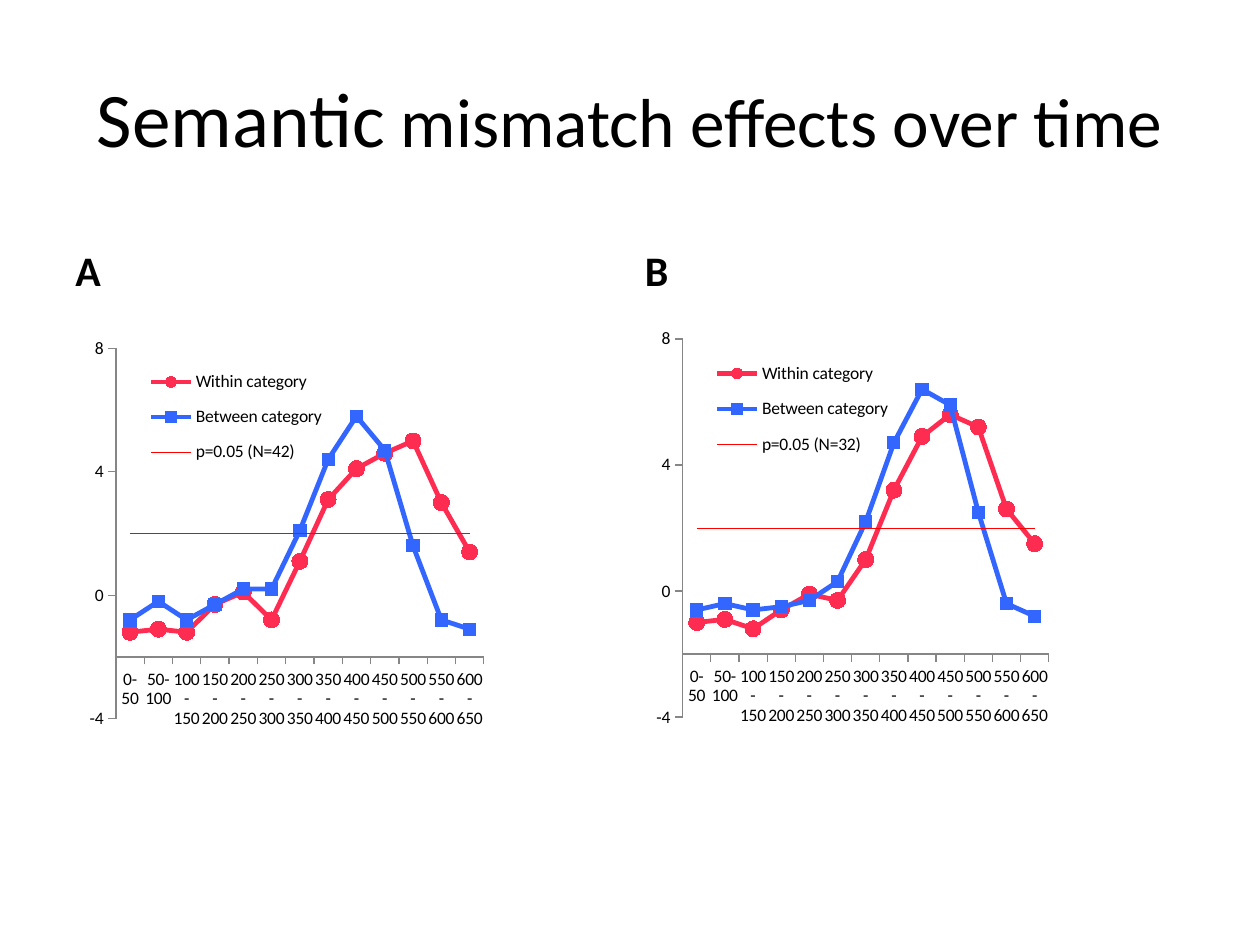
import pptx
import pptx.util
import pptx.chart.data
import pptx.dml.color
import pptx.enum.chart
import pptx.enum.text
import pptx.oxml
import pptx.oxml.ns

Inches = pptx.util.Inches
Pt = pptx.util.Pt
RGBColor = pptx.dml.color.RGBColor
Mark = pptx.enum.chart.XL_MARKER_STYLE
BLACK = RGBColor(0, 0, 0)
GRAY = RGBColor(0x86, 0x86, 0x86)
PINK = RGBColor(0xFF, 0x2C, 0x52)
BLUE = RGBColor(0x33, 0x66, 0xFF)
RED = RGBColor(0xFF, 0, 0)
CATS = [f"{low}-{low + 50}" for low in range(0, 650, 50)]
LOOKS = [
    (PINK, 2.75, Mark.CIRCLE, 9),
    (BLUE, 2.75, Mark.SQUARE, 7),
    (RED, 0.5, Mark.NONE, None),
]
PLOT = (0.101, 0.06, 0.702, 0.784)
KEY = (0.116, 0.078, 0.43, 0.255)


class Deck:
    face = "Calibri"

    def __init__(self, slide):
        self.slide = slide

    def font(self, font, size, bold=False):
        font.name = self.face
        font.size = Pt(size)
        font.bold = bold
        font.color.rgb = BLACK

    def run(self, para, text, size, bold=False):
        run = para.add_run()
        run.text = text
        self.font(run.font, size, bold)

    def title(self, box, runs):
        shape = self.slide.shapes.title
        shape.left, shape.top, shape.width, shape.height = map(Inches, box)
        frame = shape.text_frame
        frame.vertical_anchor = pptx.enum.text.MSO_ANCHOR.MIDDLE
        para = frame.paragraphs[0]
        para.alignment = pptx.enum.text.PP_ALIGN.CENTER
        for text, size in runs:
            self.run(para, text, size)

    def label(self, box, text):
        frame = self.slide.shapes.add_textbox(*map(Inches, box)).text_frame
        frame.word_wrap = False
        frame.auto_size = pptx.enum.text.MSO_AUTO_SIZE.SHAPE_TO_FIT_TEXT
        self.run(frame.paragraphs[0], text, 24, True)

    def place(self, parent, index, box, inner=False):
        for old in parent.findall(pptx.oxml.ns.qn("c:layout")):
            parent.remove(old)
        target = '<c:layoutTarget val="inner"/>' if inner else ""
        modes = "".join(f'<c:{axis}Mode val="edge"/>' for axis in "xy")
        sizes = "".join(f'<c:{key} val="{num}"/>' for key, num in zip("xywh", box))
        space = pptx.oxml.ns.nsdecls("c")
        parent.insert(index, pptx.oxml.parse_xml(
            f"<c:layout {space}><c:manualLayout>{target}{modes}{sizes}"
            "</c:manualLayout></c:layout>"))

    def axis(self, axis):
        axis.has_major_gridlines = False
        axis.major_tick_mark = pptx.enum.chart.XL_TICK_MARK.OUTSIDE
        axis.minor_tick_mark = pptx.enum.chart.XL_TICK_MARK.NONE
        axis.tick_label_position = pptx.enum.chart.XL_TICK_LABEL_POSITION.NEXT_TO_AXIS
        axis.format.line.color.rgb = GRAY
        axis.format.line.width = Pt(0.75)
        self.font(axis.tick_labels.font, 10)

    def series(self, line, look):
        color, width, mark, size = look
        line.smooth = False
        line.format.line.color.rgb = color
        line.format.line.width = Pt(width)
        line.marker.style = mark
        if size:
            line.marker.size = size
            line.marker.format.fill.solid()
            line.marker.format.fill.fore_color.rgb = color
            line.marker.format.line.color.rgb = color

    def chart(self, box, count, within, between):
        data = pptx.chart.data.CategoryChartData()
        data.categories = CATS
        data.add_series("Within category", within)
        data.add_series("Between category", between)
        data.add_series(f"p=0.05 (N={count})", [2] * len(CATS))
        kind = pptx.enum.chart.XL_CHART_TYPE.LINE_MARKERS
        chart = self.slide.shapes.add_chart(kind, *map(Inches, box), data).chart
        self.font(chart.font, 10)
        chart.has_title = False
        chart.plots[0].vary_by_categories = False
        for line, look in zip(chart.plots[0].series, LOOKS):
            self.series(line, look)
        self.axis(chart.category_axis)
        scale = chart.value_axis
        self.axis(scale)
        scale.minimum_scale, scale.maximum_scale, scale.major_unit = -4, 8, 4
        scale.crosses_at = -2
        scale.tick_labels.number_format = "0"
        scale.tick_labels.number_format_is_linked = False
        chart.has_legend = True
        chart.legend.position = pptx.enum.chart.XL_LEGEND_POSITION.RIGHT
        chart.legend.include_in_layout = False
        self.font(chart.legend.font, 10)
        self.place(chart.plots[0]._element.getparent(), 0, PLOT, True)
        self.place(chart.legend._element, 1, KEY)


def main():
    show = pptx.Presentation()
    show.slide_width, show.slide_height = Inches(10), Inches(7.5)
    deck = Deck(show.slides.add_slide(show.slide_layouts[5]))
    deck.title((0.5, 0.3, 9, 1.25),
               [("Semantic", 44.1), (" mismatch effects over time", 39.6)])
    deck.label((0.5, 1.89, 0.41, 0.5), "A")
    deck.label((5.02, 1.89, 0.39, 0.5), "B")
    deck.chart((5, 2.46, 4.14, 3.83), 32,
               [-1, -0.9, -1.2, -0.6, -0.1, -0.3, 1, 3.2, 4.9, 5.6, 5.2, 2.6, 1.5],
               [-0.6, -0.4, -0.6, -0.5, -0.3, 0.3, 2.2, 4.7, 6.4, 5.9, 2.5, -0.4, -0.8])
    deck.chart((0.5, 2.54, 4.16, 3.75), 42,
               [-1.2, -1.1, -1.2, -0.3, 0.1, -0.8, 1.1, 3.1, 4.1, 4.6, 5, 3, 1.4],
               [-0.8, -0.2, -0.8, -0.3, 0.2, 0.2, 2.1, 4.4, 5.8, 4.7, 1.6, -0.8, -1.1])
    show.save("out.pptx")


if __name__ == "__main__":
    main()
